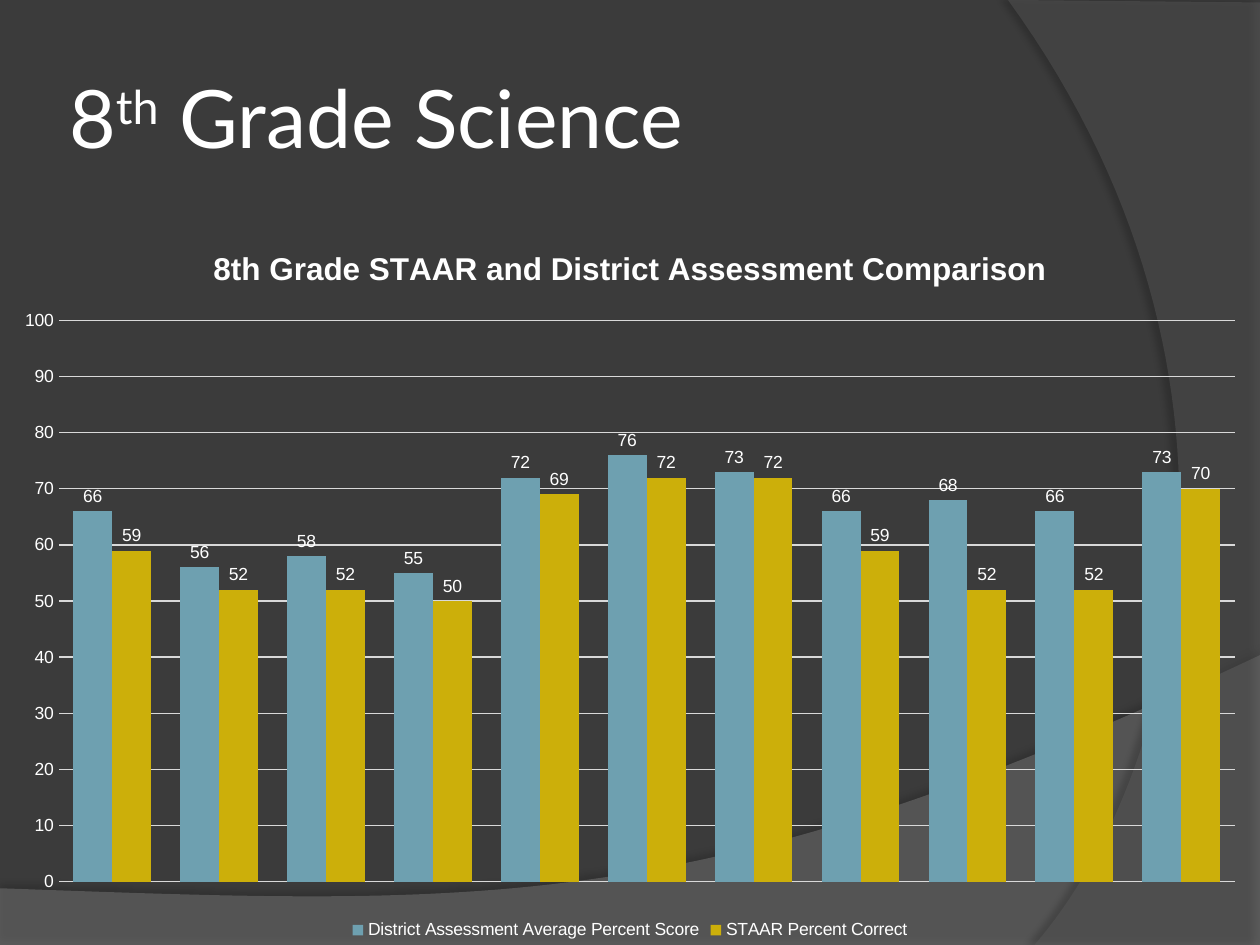
from lxml.etree import SubElement
from pptx import Presentation
from pptx.chart.data import CategoryChartData
from pptx.dml.color import RGBColor
from pptx.enum.chart import XL_CHART_TYPE as ChartType, XL_LABEL_POSITION as LabelPosition
from pptx.enum.chart import XL_LEGEND_POSITION as LegendPosition, XL_TICK_MARK as TickMark
from pptx.enum.text import MSO_ANCHOR as Anchor, PP_ALIGN as Align
from pptx.oxml.ns import qn
from pptx.util import Inches, Pt

WIDTH, HEIGHT = 10, 7.5
BACKGROUND, WHITE, GRID = "3B3B3B", "FFFFFF", "D9D9D9"
TITLE_RUNS = [("8", 0), ("th", 30), (" Grade Science", 0)]
TITLE_FONT = {"name": "Lato", "size": Pt(46), "bold": False}
CHART_FONT = {"name": "Arial", "size": Pt(10)}
CHART_TITLE_FONT = {"name": "Arial", "size": Pt(18), "bold": True}
CHART_TITLE = "8th Grade STAAR and District Assessment Comparison"
SERIES = [
    ("District Assessment Average Percent Score", "6EA0B0",
     [66, 56, 58, 55, 72, 76, 73, 66, 68, 66, 73]),
    ("STAAR Percent Correct", "CCAF0A",
     [59, 52, 52, 50, 69, 72, 72, 59, 52, 52, 70]),
]
WAVES = [
    {"curve": [(10, 5.2), (5.59, 7.29), (3.91, 7.19), (0, 7.05)],
     "corners": [(0, 7.5), (10, 7.5)],
     "color": "7F7F7F", "alpha": 45,
     "shadow": {"alpha": 35, "blur": 4, "distance": 3.5, "angle": 270}},
    {"curve": [(8.21, 7.5), (9.35, 6.19), (10.18, 3), (8, 0)],
     "corners": [(10, 0.02), (10, 7.5)],
     "color": "5E5E5E", "alpha": 40,
     "shadow": {"alpha": 45, "blur": 4, "distance": 4, "angle": 180}},
]
CURVE_STEPS = 60


def rgb(color):
    return RGBColor.from_string(color)


def apply(target, values):
    for name, value in values.items():
        setattr(target, name, value)


def style_font(font, values):
    apply(font, values)
    font.color.rgb = rgb(WHITE)


def paint(fill, color):
    fill.solid()
    fill.fore_color.rgb = rgb(color)


def add_alpha(color_element, percent):
    SubElement(color_element, qn("a:alpha"), val=str(percent * 1000))


def bezier(points, share):
    weights = [(1 - share) ** 3, 3 * share * (1 - share) ** 2,
               3 * share ** 2 * (1 - share), share ** 3]
    return tuple(sum(w * p[axis] for w, p in zip(weights, points)) for axis in (0, 1))


def add_wave(slide, wave):
    curve = [bezier(wave["curve"], step / CURVE_STEPS) for step in range(CURVE_STEPS + 1)]
    points = [(Inches(x), Inches(y)) for x, y in curve + wave["corners"]]
    builder = slide.shapes.build_freeform(*points[0])
    builder.add_line_segments(points[1:], close=True)
    shape = builder.convert_to_shape()
    paint(shape.fill, wave["color"])
    shape.line.fill.background()
    shape.shadow.inherit = False
    properties = shape.element.spPr
    add_alpha(properties.find(qn("a:solidFill"))[0], wave["alpha"])
    shadow = wave["shadow"]
    outer = SubElement(properties.find(qn("a:effectLst")), qn("a:outerShdw"),
                       blurRad=str(Pt(shadow["blur"])), dist=str(Pt(shadow["distance"])),
                       dir=str(shadow["angle"] * 60000), algn="ctr", rotWithShape="0")
    add_alpha(SubElement(outer, qn("a:srgbClr"), val="000000"), shadow["alpha"])


def fill_title(slide):
    title = slide.shapes.title
    apply(title, {"left": Inches(0.5), "top": Inches(0.3),
                  "width": Inches(8.17), "height": Inches(1.25)})
    frame = title.text_frame
    apply(frame, {"vertical_anchor": Anchor.MIDDLE, "word_wrap": True})
    apply(frame, {f"margin_{side}": Inches(0.05) for side in ("left", "top", "right", "bottom")})
    paragraph = frame.paragraphs[0]
    paragraph.alignment = Align.LEFT
    for text, baseline in TITLE_RUNS:
        run = paragraph.add_run()
        run.text = text
        style_font(run.font, TITLE_FONT)
        if baseline:
            run.font._element.set("baseline", str(baseline * 1000))
    slide.shapes._spTree.append(title.element)


def add_comparison_chart(slide):
    data = CategoryChartData(number_format="0")
    data.categories = [str(number + 1) for number in range(len(SERIES[0][2]))]
    for name, _, values in SERIES:
        data.add_series(name, values)
    top = 1.75
    chart = slide.shapes.add_chart(ChartType.COLUMN_CLUSTERED, 0, Inches(top), Inches(WIDTH),
                                   Inches(HEIGHT - top), data).chart
    style_font(chart.font, CHART_FONT)
    chart.has_title = True
    chart.chart_title.include_in_layout = False
    run = chart.chart_title.text_frame.paragraphs[0].add_run()
    run.text = CHART_TITLE
    style_font(run.font, CHART_TITLE_FONT)
    chart.has_legend = True
    apply(chart.legend, {"position": LegendPosition.BOTTOM, "include_in_layout": False})

    chart.category_axis.visible = False
    axis = chart.value_axis
    apply(axis, {"minimum_scale": 0, "maximum_scale": 100, "major_unit": 10,
                 "major_tick_mark": TickMark.NONE, "minor_tick_mark": TickMark.NONE,
                 "has_major_gridlines": True})
    apply(axis.tick_labels, {"number_format": "0", "number_format_is_linked": False})
    axis.format.line.fill.background()
    gridline = axis.major_gridlines.format.line
    paint(gridline.fill, GRID)
    gridline.width = Pt(0.75)

    plot = chart.plots[0]
    apply(plot, {"gap_width": 75, "overlap": 0, "vary_by_categories": False})
    for series, (_, color, _) in zip(plot.series, SERIES):
        paint(series.format.fill, color)
        apply(series.data_labels, {"show_value": True, "number_format": "0",
                                   "number_format_is_linked": False,
                                   "position": LabelPosition.OUTSIDE_END})


def main():
    presentation = Presentation()
    apply(presentation, {"slide_width": Inches(WIDTH), "slide_height": Inches(HEIGHT)})
    slide = presentation.slides.add_slide(presentation.slide_layouts.get_by_name("Title Only"))
    paint(slide.background.fill, BACKGROUND)
    for wave in WAVES:
        add_wave(slide, wave)
    fill_title(slide)
    add_comparison_chart(slide)
    presentation.save("out.pptx")


if __name__ == "__main__":
    main()
